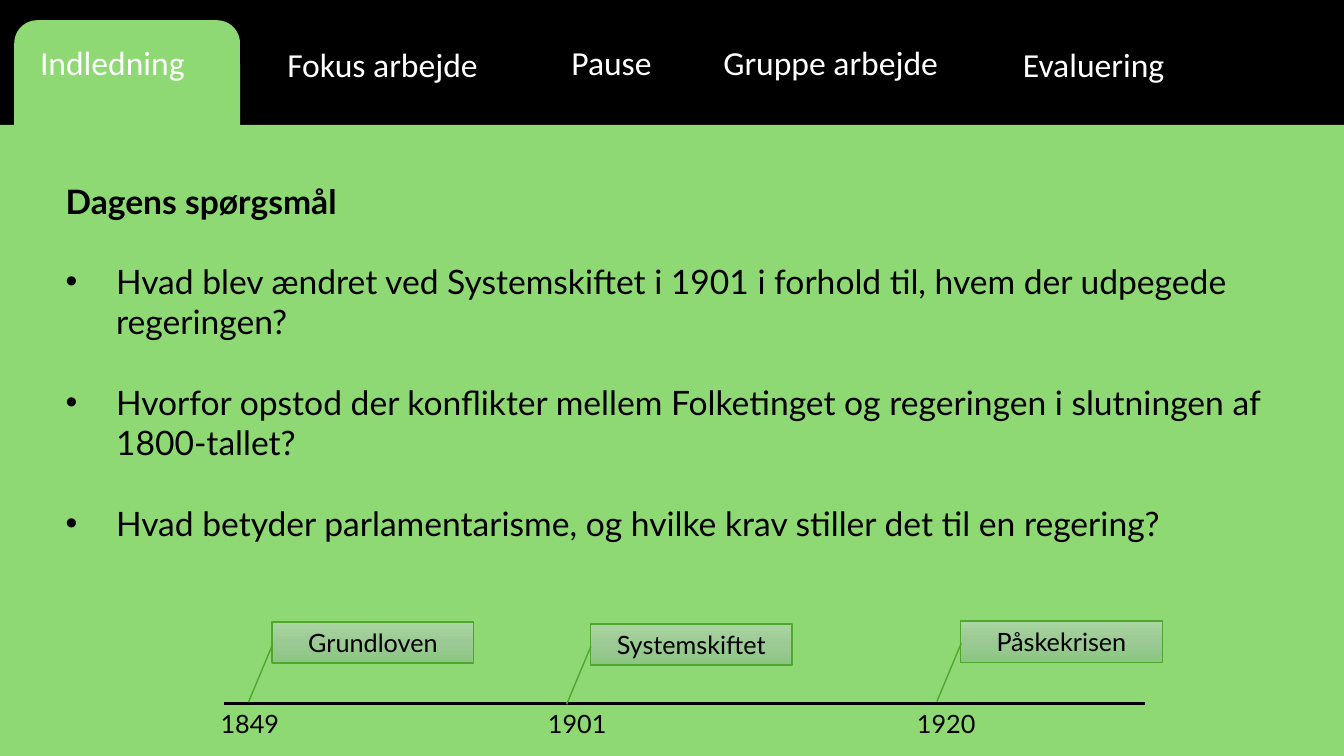
from copy import deepcopy
from dataclasses import dataclass

from lxml import etree
from pptx import Presentation
from pptx.dml.color import RGBColor
from pptx.enum.shapes import MSO_CONNECTOR, MSO_SHAPE
from pptx.enum.text import MSO_ANCHOR, MSO_AUTO_SIZE, PP_ALIGN
from pptx.oxml.ns import qn
from pptx.util import Cm, Pt

RECT, ROUND, CALLOUT = MSO_SHAPE.RECTANGLE, MSO_SHAPE.ROUNDED_RECTANGLE, MSO_SHAPE.LINE_CALLOUT_1
STRAIGHT = MSO_CONNECTOR.STRAIGHT
LEFT, CENTER = PP_ALIGN.LEFT, PP_ALIGN.CENTER
TOP, MIDDLE = MSO_ANCHOR.TOP, MSO_ANCHOR.MIDDLE
NO_FIT = MSO_AUTO_SIZE.NONE

# Tab label, left, top, width (cm)
TABS = [
    ("Indledning", 0.76, 0.94, 5.46),
    ("Fokus arbejde", 6.99, 0.97, 6.4),
    ("Pause", 14.15, 0.94, 3.07),
    ("Gruppe arbejde", 17.98, 0.94, 6.78),
    ("Evaluering", 25.53, 0.97, 5.46),
]
HEADING = "Dagens spørgsmål"
QUESTIONS = [
    "Hvad blev ændret ved Systemskiftet i 1901 i forhold til, hvem der udpegede regeringen?",
    "Hvorfor opstod der konflikter mellem Folketinget og regeringen i slutningen af 1800-tallet?",
    "Hvad betyder parlamentarisme, og hvilke krav stiller det til en regering?",
]
# Event, callout left and top, year, year left (cm)
EVENTS = [
    ("Grundloven", 6.86, 15.67, "1849", 5.31),
    ("Systemskiftet", 14.88, 15.72, "1901", 13.56),
    ("Påskekrisen", 24.21, 15.65, "1920", 22.86),
]
CALLOUT_POINTS = (0.538, 0.003, 1.95, -0.118)
AXIS_LEFT, AXIS_RIGHT, AXIS_Y = 5.64, 28.85, 17.73


@dataclass(frozen=True)
class Theme:
    black: RGBColor = RGBColor(0, 0, 0)
    white: RGBColor = RGBColor(255, 255, 255)
    panel: RGBColor = RGBColor.from_string("8ED973")
    border: RGBColor = RGBColor.from_string("4EA72E")
    gradient: tuple = ((0, "A8D5A0"), (0.5, "9CCA94"), (1, "8AC680"))
    tab_font: str = "Calibri"
    font: str = "Lato"
    large: Pt = Pt(24)
    small: Pt = Pt(18)
    gap: Pt = Pt(28.8)


THEME = Theme()


def box(left, top, width, height):
    return Cm(left), Cm(top), Cm(width), Cm(height)


def write(p, text, size, color=THEME.black, font=THEME.font, bold=False, align=LEFT):
    p.alignment = align
    r = p.add_run()
    r.text = text
    r.font.name, r.font.size, r.font.bold = font, size, bold
    r.font.color.rgb = color


def add_label(s, text, place, size, **style):
    tf = s.shapes.add_textbox(*place).text_frame
    tf.word_wrap = True
    write(tf.paragraphs[0], text, size, **style)


def add_panel(s, kind, place):
    sp = s.shapes.add_shape(kind, *place)
    sp.shadow.inherit = False
    sp.fill.solid()
    sp.fill.fore_color.rgb = THEME.panel
    sp.line.fill.background()


def place_text(sp, place):
    """Bring a placeholder in front of the panels and ready its text frame."""
    sp.element.getparent().append(sp.element)
    sp.left, sp.top, sp.width, sp.height = place
    tf = sp.text_frame
    tf.word_wrap, tf.auto_size, tf.vertical_anchor = True, NO_FIT, TOP
    return tf


def add_callout(s, text, left, top):
    sp = s.shapes.add_shape(CALLOUT, *box(left, top, 5.08, 1.04))
    for i, value in enumerate(CALLOUT_POINTS):
        sp.adjustments[i] = value
    sp.shadow.inherit = False
    sp.fill.gradient()
    sp.fill.gradient_angle = 270
    stops = sp.element.spPr.find(qn("a:gradFill")).find(qn("a:gsLst"))
    stops.insert(1, deepcopy(stops[0]))
    for stop, (position, color) in zip(sp.fill.gradient_stops, THEME.gradient):
        stop.position = position
        stop.color.rgb = RGBColor.from_string(color)
    sp.line.color.rgb = THEME.border
    sp.line.width = Pt(1)
    tf = sp.text_frame
    tf.vertical_anchor = MIDDLE
    write(tf.paragraphs[0], text, THEME.small, align=CENTER)


def add_tabs(s):
    add_panel(s, ROUND, box(0.36, 0.51, 5.69, 3.48))
    add_panel(s, RECT, box(0, 3.15, 33.87, 15.9))
    for text, left, top, width in TABS:
        add_label(s, text, box(left, top, width, 1.27), THEME.large,
                  color=THEME.white, font=THEME.tab_font)


def add_questions(s):
    title, body = s.placeholders
    tf = place_text(title, box(1.4, 4.42, 31.65, 1.27))
    write(tf.paragraphs[0], HEADING, THEME.large, bold=True)
    tf = place_text(body, box(1.4, 6.45, 31.65, 7.47))
    for i, question in enumerate(QUESTIONS):
        p = tf.add_paragraph() if i else tf.paragraphs[0]
        pPr = p._p.get_or_add_pPr()
        pPr.set("marL", str(Cm(1.27)))
        pPr.set("indent", str(-Cm(1.27)))
        p.space_before = THEME.gap if i else Pt(0)
        write(p, question, THEME.large)


def add_timeline(s):
    axis = s.shapes.add_connector(STRAIGHT, Cm(AXIS_LEFT), Cm(AXIS_Y), Cm(AXIS_RIGHT), Cm(AXIS_Y))
    axis.line.color.rgb = THEME.black
    axis.line.width = Pt(2)
    etree.SubElement(axis.element.spPr, qn("a:effectLst"))
    for event, left, top, year, year_left in EVENTS:
        add_callout(s, event, left, top)
        add_label(s, year, box(year_left, AXIS_Y, 10.9, 0.81), THEME.small)


def main():
    prs = Presentation()
    prs.slide_width, prs.slide_height = Cm(33.87), Cm(19.05)
    s = prs.slides.add_slide(prs.slide_layouts[1])
    s.background.fill.solid()
    s.background.fill.fore_color.rgb = THEME.black
    add_tabs(s)
    add_questions(s)
    add_timeline(s)
    prs.save("out.pptx")


if __name__ == "__main__":
    main()
